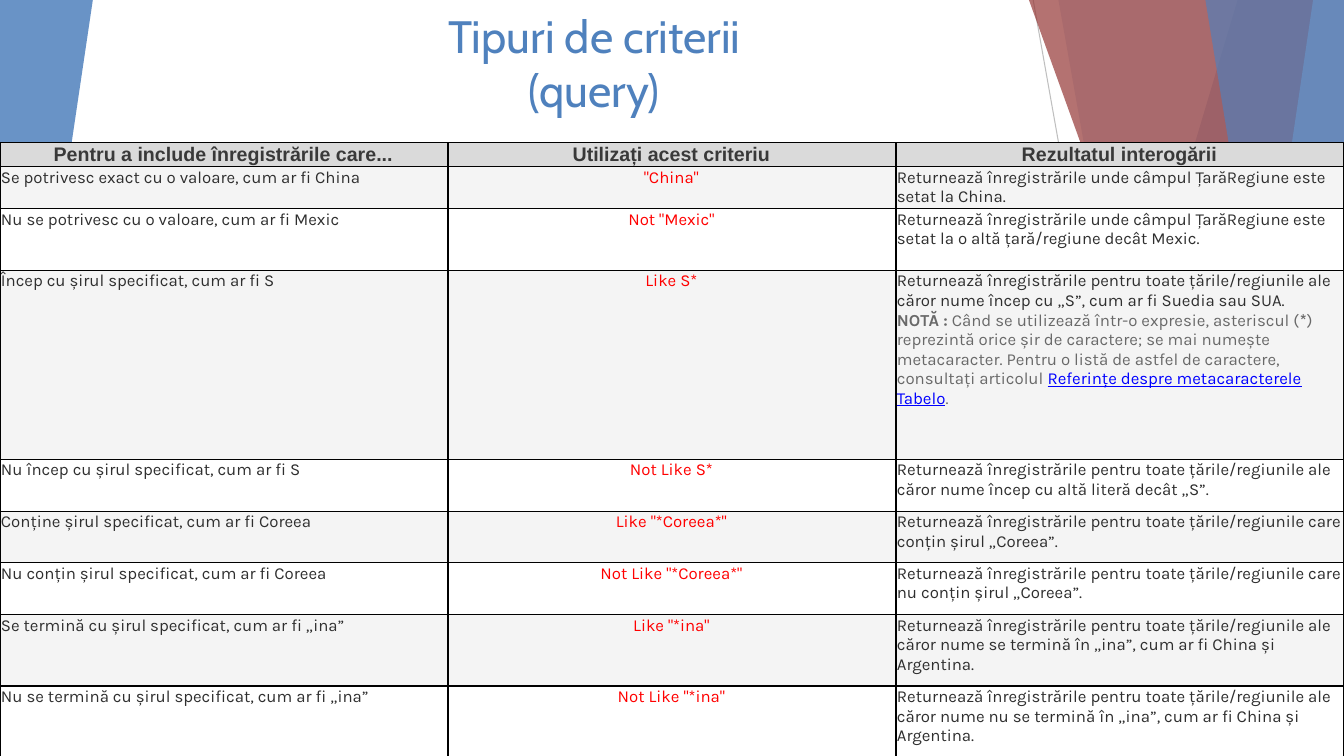
from dataclasses import dataclass

from lxml.etree import SubElement
from pptx import Presentation
from pptx.dml.color import RGBColor
from pptx.enum.shapes import MSO_CONNECTOR, MSO_SHAPE
from pptx.enum.text import MSO_ANCHOR, MSO_AUTO_SIZE, PP_ALIGN
from pptx.oxml import parse_xml
from pptx.oxml.ns import nsdecls, qn
from pptx.util import Pt


@dataclass(frozen=True)
class Theme:
    blue: str = "4F81BD"
    light_blue: str = "95B3D7"
    dark_red: str = "953735"
    grey_line: str = "BFBFBF"
    border: str = "000000"
    header_fill: str = "DADADA"
    band_fill: str = "F4F4F4"
    plain_fill: str = "FFFFFF"
    header_text: str = "393939"
    body_text: str = "2F2F2F"
    note_text: str = "696969"
    criterion: str = "FF0000"
    reference: str = "0000FF"
    title_size: float = 32.4
    header_size: float = 14
    body_size: float = 12


theme = Theme()
WIDTH, HEIGHT = 960, 540
TABLE_TOP = 102

TITLE = {"name": "Cabin", "size": Pt(theme.title_size), "bold": False}
HEADER = {"name": "Arial", "size": Pt(theme.header_size), "bold": True}
BODY = {"name": "Karla", "size": Pt(theme.body_size), "bold": False}
NOTE_BOLD = BODY | {"bold": True}
REFERENCE = BODY | {"underline": True}


def add_run(paragraph, text, font_format, color):
    run = paragraph.add_run()
    run.text = text
    for attribute, value in font_format.items():
        setattr(run.font, attribute, value)
    run.font.color.rgb = RGBColor.from_string(color)


def paint(shape, color, opacity):
    shape.shadow.inherit = False
    shape.line.fill.background()
    shape.fill.solid()
    shape.fill.fore_color.rgb = RGBColor.from_string(color)
    fill_color = shape.element.spPr.find(f".//{qn('a:srgbClr')}")
    SubElement(fill_color, qn("a:alpha"), val=str(opacity * 1000))


presentation = Presentation()
presentation.slide_width, presentation.slide_height = Pt(WIDTH), Pt(HEIGHT)
slide = presentation.slides.add_slide(presentation.slide_layouts[5])
shapes = slide.shapes

# Background: thin line, then facets running to the right edge
ray = shapes.add_connector(MSO_CONNECTOR.STRAIGHT, Pt(738), 0, Pt(834), Pt(HEIGHT))
ray.line.color.rgb = RGBColor.from_string(theme.grey_line)
ray.line.width = Pt(0.75)
SubElement(ray.element.spPr, qn("a:effectLst"))

facets = [  # left edge at the top, left edge at the bottom, colour, opacity
    (884, 723, theme.blue, 30),
    (756, 852, theme.blue, 20),
    (735, 930, theme.dark_red, 70),
    (938, 858, theme.light_blue, 70),
    (861, 949, theme.blue, 65),
]
for top_x, bottom_x, color, opacity in facets:
    builder = shapes.build_freeform(top_x, 0, scale=Pt(1))
    builder.add_line_segments([(WIDTH, 0), (WIDTH, HEIGHT), (bottom_x, HEIGHT)])
    paint(builder.convert_to_shape(), color, opacity)

left_wedge = shapes.add_shape(MSO_SHAPE.ISOSCELES_TRIANGLE, 0, 0, Pt(66.3), Pt(446.4))
left_wedge.adjustments[0] = 1
left_wedge.rotation = 180
paint(left_wedge, theme.blue, 85)

# Title, brought in front of the facets
title = shapes.title
title_box = {"left": Pt(119), "top": 0, "width": Pt(611), "height": Pt(87)}
for attribute, value in title_box.items():
    setattr(title, attribute, value)
shapes.element.append(title.element)
title_frame = title.text_frame
title_frame.auto_size = MSO_AUTO_SIZE.NONE
title_frame.word_wrap = True
title_frame.vertical_anchor = MSO_ANCHOR.BOTTOM
title_text = title_frame.paragraphs[0]
title_text.alignment = PP_ALIGN.CENTER
add_run(title_text, "Tipuri de criterii", TITLE, theme.blue)
title_text.add_line_break()
add_run(title_text, "(query)", TITLE, theme.blue)

# Table content: row height, condition, criterion, result
headings = (16, "Pentru a include înregistrările care...", "Utilizați acest criteriu",
            "Rezultatul interogării")
all_countries = "Returnează înregistrările pentru toate țările/regiunile"
one_field = "Returnează înregistrările unde câmpul ȚarăRegiune este setat la"
criteria = [
    (30, "Se potrivesc exact cu o valoare, cum ar fi China", '"China"',
     f"{one_field} China."),
    (44, "Nu se potrivesc cu o valoare, cum ar fi Mexic", 'Not "Mexic"',
     f"{one_field} o altă țară/regiune decât Mexic."),
    (135, "Încep cu șirul specificat, cum ar fi S", "Like S*",
     f"{all_countries} ale căror nume încep cu „S”, cum ar fi Suedia sau SUA."),
    (37, "Nu încep cu șirul specificat, cum ar fi S", "Not Like S*",
     f"{all_countries} ale căror nume încep cu altă literă decât „S”."),
    (37, "Conține șirul specificat, cum ar fi Coreea", 'Like "*Coreea*"',
     f"{all_countries} care conțin șirul „Coreea”."),
    (37, "Nu conțin șirul specificat, cum ar fi Coreea", 'Not Like "*Coreea*"',
     f"{all_countries} care nu conțin șirul „Coreea”."),
    (51, "Se termină cu șirul specificat, cum ar fi „ina”", 'Like "*ina"',
     f"{all_countries} ale căror nume se termină în „ina”, cum ar fi China și Argentina."),
    (51, "Nu se termină cu șirul specificat, cum ar fi „ina”", 'Not Like "*ina"',
     f"{all_countries} ale căror nume nu se termină în „ina”, cum ar fi China și Argentina."),
]
wildcard_note = [
    ("NOTĂ :", NOTE_BOLD, theme.note_text),
    (" Când se utilizează într-o expresie, asteriscul (", BODY, theme.note_text),
    ("*", NOTE_BOLD, theme.note_text),
    (") reprezintă orice șir de caractere; se mai numește metacaracter. "
     "Pentru o listă de astfel de caractere, consultați articolul ", BODY, theme.note_text),
    ("Referințe despre metacaracterele Tabelo", REFERENCE, theme.reference),
    (".", BODY, theme.note_text),
]

# Table
rows = [headings, *criteria]
table_height = sum(row[0] for row in rows)
table_frame = shapes.add_table(len(rows), 3, 0, Pt(TABLE_TOP), Pt(WIDTH), Pt(table_height))
criteria_table = table_frame.table
criteria_table.first_row = criteria_table.horz_banding = False
cell_margins = {"margin_left": Pt(0.7), "margin_top": Pt(0.7),
                "margin_right": Pt(1.4), "margin_bottom": Pt(0.7)}

for row_index, (row_height, *texts) in enumerate(rows):
    criteria_table.rows[row_index].height = Pt(row_height)
    is_header = row_index == 0
    if is_header:
        row_fill = theme.header_fill
    else:
        row_fill = theme.band_fill if row_index % 2 else theme.plain_fill
    for column, text in enumerate(texts):
        cell = criteria_table.cell(row_index, column)
        for attribute, value in cell_margins.items():
            setattr(cell, attribute, value)
        cell.fill.solid()
        cell.fill.fore_color.rgb = RGBColor.from_string(row_fill)
        is_criterion = column == 1
        paragraph = cell.text_frame.paragraphs[0]
        paragraph.alignment = PP_ALIGN.CENTER if is_header or is_criterion else PP_ALIGN.LEFT
        if is_header:
            add_run(paragraph, text, HEADER, theme.header_text)
        else:
            add_run(paragraph, text, BODY, theme.criterion if is_criterion else theme.body_text)

# Note under the result for "Like S*"
note = criteria_table.cell(3, 2).text_frame.add_paragraph()
note.alignment = PP_ALIGN.LEFT
for text, font_format, color in wildcard_note:
    add_run(note, text, font_format, color)

# Cell borders
for cell_properties in table_frame.element.iter(qn("a:tcPr")):
    for position, side in enumerate(("lnL", "lnR", "lnT", "lnB")):
        cell_properties.insert(position, parse_xml(
            f'<a:{side} {nsdecls("a")} w="{Pt(1)}"><a:solidFill>'
            f'<a:srgbClr val="{theme.border}"/></a:solidFill></a:{side}>'))

presentation.save("out.pptx")
